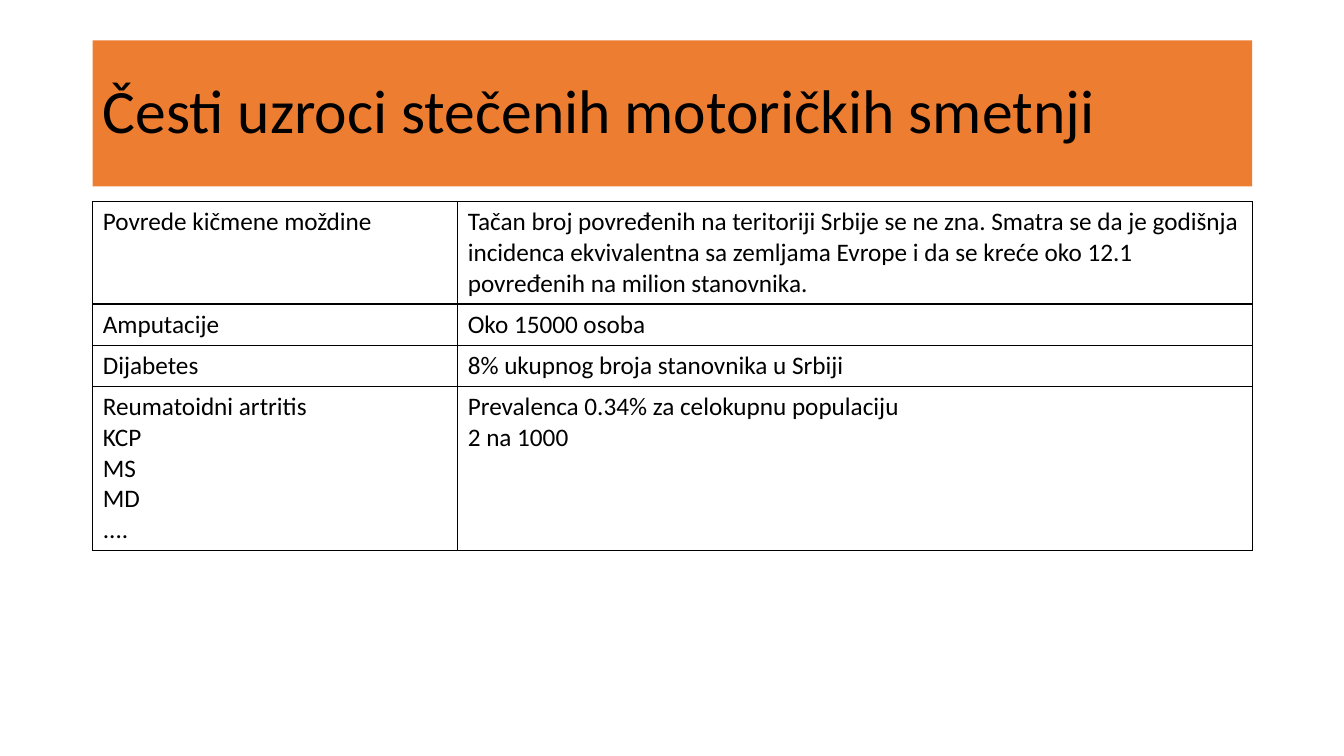
from lxml.etree import SubElement as Sub
from pptx import Presentation
from pptx.dml.color import RGBColor
from pptx.enum.shapes import MSO_SHAPE as Kind
from pptx.enum.text import MSO_ANCHOR as Anchor, PP_ALIGN as Align
from pptx.oxml.ns import qn
from pptx.util import Inches, Pt

INK, ORANGE = "000000", "ED7D31"
TITLE = "Česti uzroci stečenih motoričkih smetnji"
CAUSES = [
    ("Povrede kičmene moždine",
     "Tačan broj povređenih na teritoriji Srbije se ne zna. Smatra se da je "
     "godišnja incidenca ekvivalentna sa zemljama Evrope i da se kreće oko "
     "12.1 povređenih na milion stanovnika."),
    ("Amputacije", "Oko 15000 osoba"),
    ("Dijabetes", "8% ukupnog broja stanovnika u Srbiji"),
    ("Reumatoidni artritis\nKCP\nMS\nMD\n....",
     "Prevalenca 0.34% za celokupnu populaciju\n2 na 1000"),
]


def color(code):
    return RGBColor.from_string(code)


def write(frame, text, size, **form):
    """Fill a text frame, one paragraph a line, with paragraph format values."""
    frame.text = text
    for para in frame.paragraphs:
        for name, value in form.items():
            setattr(para, name, value)
        for run in para.runs:
            for name, value in {"name": "Calibri", "size": Pt(size)}.items():
                setattr(run.font, name, value)
            run.font.color.rgb = color(INK)


def edge(cell, code, width):
    """Draw all four borders of a cell."""
    props = cell._tc.get_or_add_tcPr()
    for place, side in enumerate(("lnL", "lnR", "lnT", "lnB")):
        line = Sub(props, qn(f"a:{side}"), w=str(Pt(width)))
        fill = Sub(line, qn("a:solidFill"))
        Sub(fill, qn("a:srgbClr"), val=code)
        props.insert(place, line)


def banner(slide, left, top, width, height):
    shape = slide.shapes.add_shape(
        Kind.RECTANGLE, *map(Inches, (left, top, width, height)))
    shape.shadow.inherit = False
    shape.fill.solid()
    shape.fill.fore_color.rgb = color(ORANGE)
    shape.line.fill.background()
    frame = shape.text_frame
    frame.word_wrap = True
    frame.vertical_anchor = Anchor.MIDDLE
    write(frame, TITLE, 44, alignment=Align.LEFT, line_spacing=0.9)


def grid(slide, left, top, width, height):
    """Table of causes; rows grow from one line to fit their text."""
    frame = slide.shapes.add_table(
        len(CAUSES), 2, *map(Inches, (left, top, width, height)))
    table = frame.table
    table.first_row = table.horz_banding = False
    first = 3.62
    for col, size in zip(table.columns, (first, width - first)):
        col.width = Inches(size)
    for row, texts in zip(table.rows, CAUSES):
        row.height = Inches(0.41)
        for cell, text in zip(row.cells, texts):
            cell.fill.background()
            edge(cell, INK, 1)
            write(cell.text_frame, text, 18)
    frame.height = Inches(height)


def main():
    deck = Presentation()
    deck.slide_width, deck.slide_height = Inches(13.33), Inches(7.5)
    slide = deck.slides.add_slide(deck.slide_layouts[6])
    left, width = 0.92, 11.5
    banner(slide, left, 0.4, width, 1.45)
    grid(slide, left, 2, width, 3.41)
    deck.save("out.pptx")


if __name__ == "__main__":
    main()
